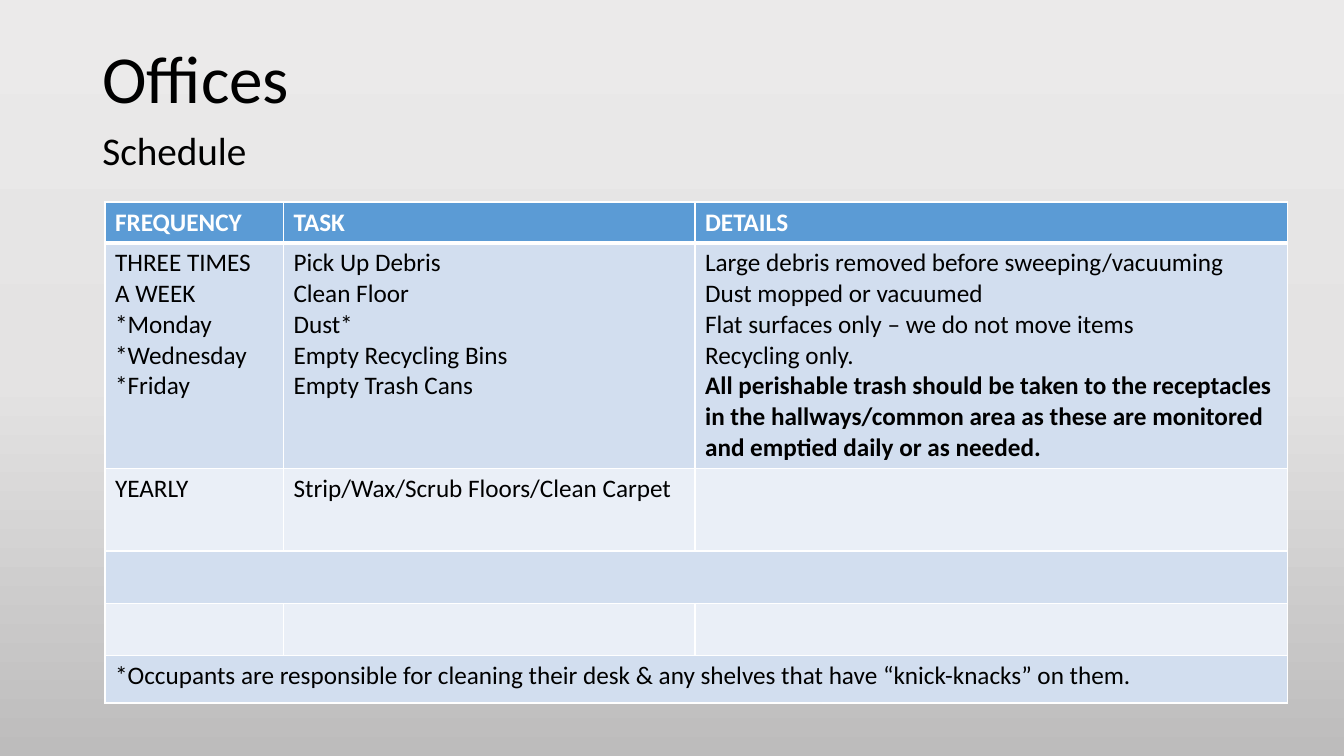
from copy import deepcopy

from lxml.etree import SubElement
from pptx import Presentation
from pptx.dml.color import RGBColor
from pptx.enum.text import MSO_ANCHOR as Anchor, PP_ALIGN as Align
from pptx.oxml.ns import qn
from pptx.util import Pt

BLACK, WHITE = "000000", "FFFFFF"
HEADER_FILL = "5B9BD5"
BAND_FILLS = ["EAEFF7", "D2DEEF"]
COLUMN_WIDTHS = [127.5, 294, 423]
ROW_HEIGHTS = [28.8, 159.2, 59, 37.5, 37.5, 33.7]
MERGED_ROWS = [3, 5]
ROWS = [
    [["FREQUENCY"], ["TASK"], ["DETAILS"]],
    [
        ["THREE TIMES", "A WEEK", "*Monday", "*Wednesday", "*Friday"],
        ["Pick Up Debris", "Clean Floor", "Dust*", "Empty Recycling Bins", "Empty Trash Cans"],
        [
            "Large debris removed before sweeping/vacuuming",
            "Dust mopped or vacuumed",
            "Flat surfaces only – we do not move items",
            "Recycling only.",
            "All perishable trash should be taken to the receptacles in the "
            "hallways/common area as these are monitored and emptied daily or as needed.",
        ],
    ],
    [["YEARLY"], ["Strip/Wax/Scrub Floors/Clean Carpet"], []],
    [[], [], []],
    [[], [], []],
    [["*Occupants are responsible for cleaning their desk & any shelves "
      "that have “knick-knacks” on them."], [], []],
]


def rgb(value):
    return RGBColor.from_string(value)


class SlideBuilder:
    font = "Calibri"

    def __init__(self, prs):
        self.slide = prs.slides.add_slide(prs.slide_layouts[5])

    def background(self, colors):
        fill = self.slide.background.fill
        fill.gradient()
        fill.gradient_angle = 270
        stop_list = self.slide.element.find(".//" + qn("a:gsLst"))
        stop_list.insert(1, deepcopy(stop_list[0]))
        for i, (stop, color) in enumerate(zip(fill.gradient_stops, colors)):
            stop.position = i / (len(colors) - 1)
            stop.color.rgb = rgb(color)

    def style(self, p, size, color=BLACK, bold=False):
        p.font.name = self.font
        p.font.size = Pt(size)
        p.font.bold = bold
        p.font.color.rgb = rgb(color)
        p.alignment = Align.LEFT

    def heading(self, sp, text, box, size, anchor):
        sp.left, sp.top, sp.width, sp.height = map(Pt, box)
        tf = sp.text_frame
        tf.word_wrap = True
        tf.vertical_anchor = anchor
        p = tf.paragraphs[0]
        p.text = text
        p.line_spacing = 0.9
        self.style(p, size)
        return p

    def title(self, text, box, size):
        self.heading(self.slide.shapes.title, text, box, size, Anchor.MIDDLE)

    def subtitle(self, text, box, size):
        sp = self.slide.shapes.add_textbox(*map(Pt, box))
        p = self.heading(sp, text, box, size, Anchor.TOP)
        p.space_before = Pt(10)

    def borders(self, cell, top, bottom):
        props = cell._tc.get_or_add_tcPr()
        for side, width in zip("LRTB", [1, 1, top, bottom]):
            line = SubElement(props, qn(f"a:ln{side}"), w=str(Pt(width)))
            fill = SubElement(line, qn("a:solidFill"))
            SubElement(fill, qn("a:srgbClr"), val=WHITE)

    def cell(self, cell, lines, row):
        self.borders(cell, 3 if row == 1 else 1, 3 if row == 0 else 1)
        cell.fill.solid()
        cell.fill.fore_color.rgb = rgb(BAND_FILLS[row % 2] if row else HEADER_FILL)
        cell.text = "\n".join(lines)
        for p in cell.text_frame.paragraphs:
            bold = row == 0 or p.text.startswith("All perishable")
            self.style(p, 18, BLACK if row else WHITE, bold)

    def table(self, left, top):
        size = sum(COLUMN_WIDTHS), sum(ROW_HEIGHTS)
        frame = self.slide.shapes.add_table(
            len(ROWS), len(COLUMN_WIDTHS), *map(Pt, (left, top, *size)))
        table = frame.table
        for column, width in zip(table.columns, COLUMN_WIDTHS):
            column.width = Pt(width)
        for i, (height, row) in enumerate(zip(ROW_HEIGHTS, ROWS)):
            table.rows[i].height = Pt(height)
            for j, lines in enumerate(row):
                self.cell(table.cell(i, j), lines, i)
        for i in MERGED_ROWS:
            table.cell(i, 0).merge(table.cell(i, len(COLUMN_WIDTHS) - 1))


def main():
    prs = Presentation()
    prs.slide_width, prs.slide_height = Pt(960), Pt(540)
    s = SlideBuilder(prs)
    s.background(["EBEAEA", "E4E3E3", "BDBCBC"])
    s.title("Offices", (66, 6.5, 828, 104.4), 48)
    s.table(75, 144.3)
    s.subtitle("Schedule", (66, 90.7, 828, 44), 28)
    prs.save("out.pptx")


if __name__ == "__main__":
    main()
